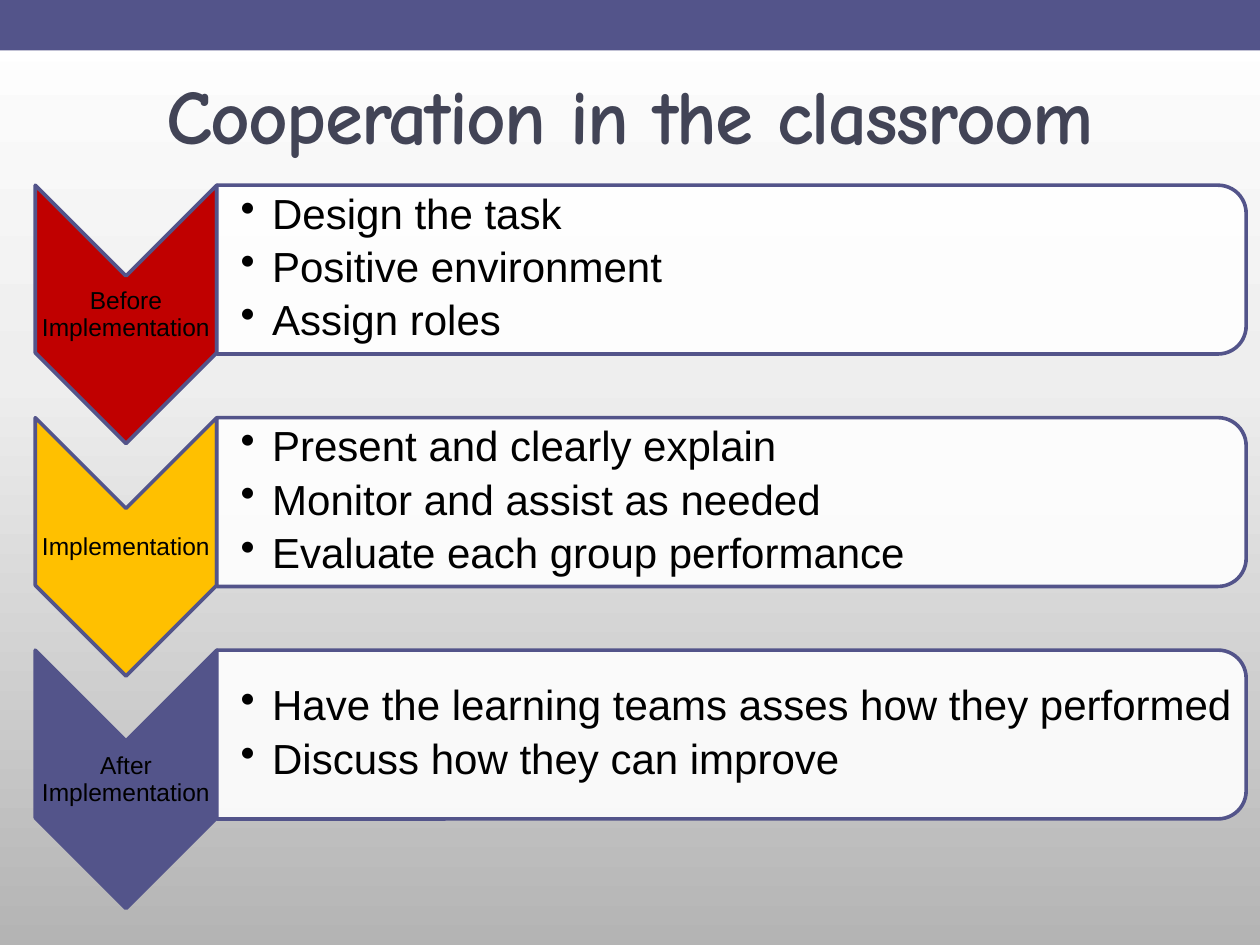
from copy import deepcopy

from lxml import etree
from pptx import Presentation
from pptx.dml.color import RGBColor
from pptx.enum.shapes import MSO_SHAPE
from pptx.enum.text import MSO_ANCHOR, PP_ALIGN
from pptx.oxml.ns import qn
from pptx.util import Inches, Pt

CHEVRON = MSO_SHAPE.CHEVRON
ROUNDED_TOP = MSO_SHAPE.ROUND_2_SAME_RECTANGLE
RECTANGLE = MSO_SHAPE.RECTANGLE
MIDDLE = MSO_ANCHOR.MIDDLE
CENTER = PP_ALIGN.CENTER

INDIGO = "53548A"
BACKGROUND_STOPS = [(0, "FFFFFF"), (0.4, "EEEEEE"), (1, "B4B4B4")]
STAGES = [
    ("Before Implementation", "C00000",
     ["Design the task", "Positive environment", "Assign roles"]),
    ("Implementation", "FFC000",
     ["Present and clearly explain", "Monitor and assist as needed",
      "Evaluate each group performance"]),
    ("After Implementation", INDIGO,
     ["Have the learning teams asses how they performed",
      "Discuss how they can improve"]),
]
STAGE_LEFT, STAGE_TOP, STAGE_PITCH = 0.28, 1.47, 1.845
CHEVRON_WIDTH, CHEVRON_HEIGHT = 1.44, 2.05
PANEL_WIDTH, PANEL_HEIGHT = 8.17, 1.34


def color(hex_value):
    return RGBColor.from_string(hex_value)


def paint_background(page):
    fill = page.background.fill
    fill.gradient()
    fill.gradient_angle = 270
    stop_list = page.element.find(".//" + qn("a:gsLst"))
    stop_list.append(deepcopy(stop_list[-1]))
    for stop, (position, hex_value) in zip(fill.gradient_stops, BACKGROUND_STOPS):
        stop.position = position
        stop.color.rgb = color(hex_value)


def add_filled(page, kind, left, top, width, height, fill):
    shape = page.shapes.add_shape(
        kind, Inches(left), Inches(top), Inches(width), Inches(height))
    shape.shadow.inherit = False
    shape.fill.solid()
    shape.fill.fore_color.rgb = color(fill)
    shape.line.fill.background()
    return shape


def add_turned(page, kind, left, top, width, height, fill):
    """Fill the given box with an outlined shape turned a quarter clockwise."""
    shift = (width - height) / 2
    shape = add_filled(page, kind, left + shift, top - shift, height, width, fill)
    shape.rotation = 90
    shape.line.color.rgb = color(INDIGO)
    shape.line.width = Pt(2.08)
    return shape


def add_text(page, left, top, width, height, lines, size, font="Arial",
             hex_value="000000", margins=(0.01, 0.01, 0.01, 0.01)):
    box = page.shapes.add_textbox(
        Inches(left), Inches(top), Inches(width), Inches(height))
    frame = box.text_frame
    frame.text = "\n".join(lines)
    frame.word_wrap = True
    frame.vertical_anchor = MIDDLE
    (frame.margin_left, frame.margin_top,
     frame.margin_right, frame.margin_bottom) = map(Inches, margins)
    for para in frame.paragraphs:
        for span in para.runs:
            span.font.size = Pt(size)
            span.font.name = font
            span.font.color.rgb = color(hex_value)
    return frame


def add_bullet(para):
    properties = para._p.get_or_add_pPr()
    properties.set("marL", str(Inches(0.25)))
    properties.set("indent", str(-Inches(0.25)))
    etree.SubElement(properties, qn("a:buChar")).set("char", "•")


def add_header(page, width):
    add_filled(page, RECTANGLE, 0, 0.24, width, 0.25, "FFFFFF")
    add_filled(page, RECTANGLE, 0, 0, width, 0.4, INDIGO)
    frame = add_text(page, 0.5, 0.36, width - 1, 1.08,
                     ["Cooperation in the classroom"], 44, "Comic Neue", "424456")
    para = frame.paragraphs[0]
    para.alignment = CENTER
    span = para.runs[0]
    span.font.bold = True
    span.font._element.set("spc", "-100")


def add_stage(page, left, top, label, fill, points):
    add_turned(page, CHEVRON, left, top, CHEVRON_WIDTH, CHEVRON_HEIGHT, fill)
    frame = add_text(page, left, top + CHEVRON_WIDTH / 2,
                     CHEVRON_WIDTH, 0.62, [label], 14)
    para = frame.paragraphs[0]
    para.alignment = CENTER
    para.line_spacing = 0.9
    para.space_after = Pt(5)

    panel_left = left + CHEVRON_WIDTH
    panel = add_turned(page, ROUNDED_TOP, panel_left, top,
                       PANEL_WIDTH, PANEL_HEIGHT, "FFFFFF")
    tint = panel.fill._xPr.find(qn("a:solidFill"))[0]
    etree.SubElement(tint, qn("a:alpha")).set("val", "90000")
    frame = add_text(page, panel_left, top + 0.06, PANEL_WIDTH - 0.07,
                     PANEL_HEIGHT - 0.13, points, 24,
                     margins=(0.19, 0.02, 0.02, 0.02))
    for para in frame.paragraphs:
        add_bullet(para)
        para.line_spacing = 0.9
        para.space_after = Pt(4.5)


def main():
    deck = Presentation()
    deck.slide_width, deck.slide_height = Inches(10), Inches(7.5)
    page = deck.slides.add_slide(deck.slide_layouts[6])
    paint_background(page)
    add_header(page, 10)
    for row, stage in enumerate(STAGES):
        add_stage(page, STAGE_LEFT, STAGE_TOP + row * STAGE_PITCH, *stage)
    deck.save("out.pptx")


if __name__ == "__main__":
    main()
